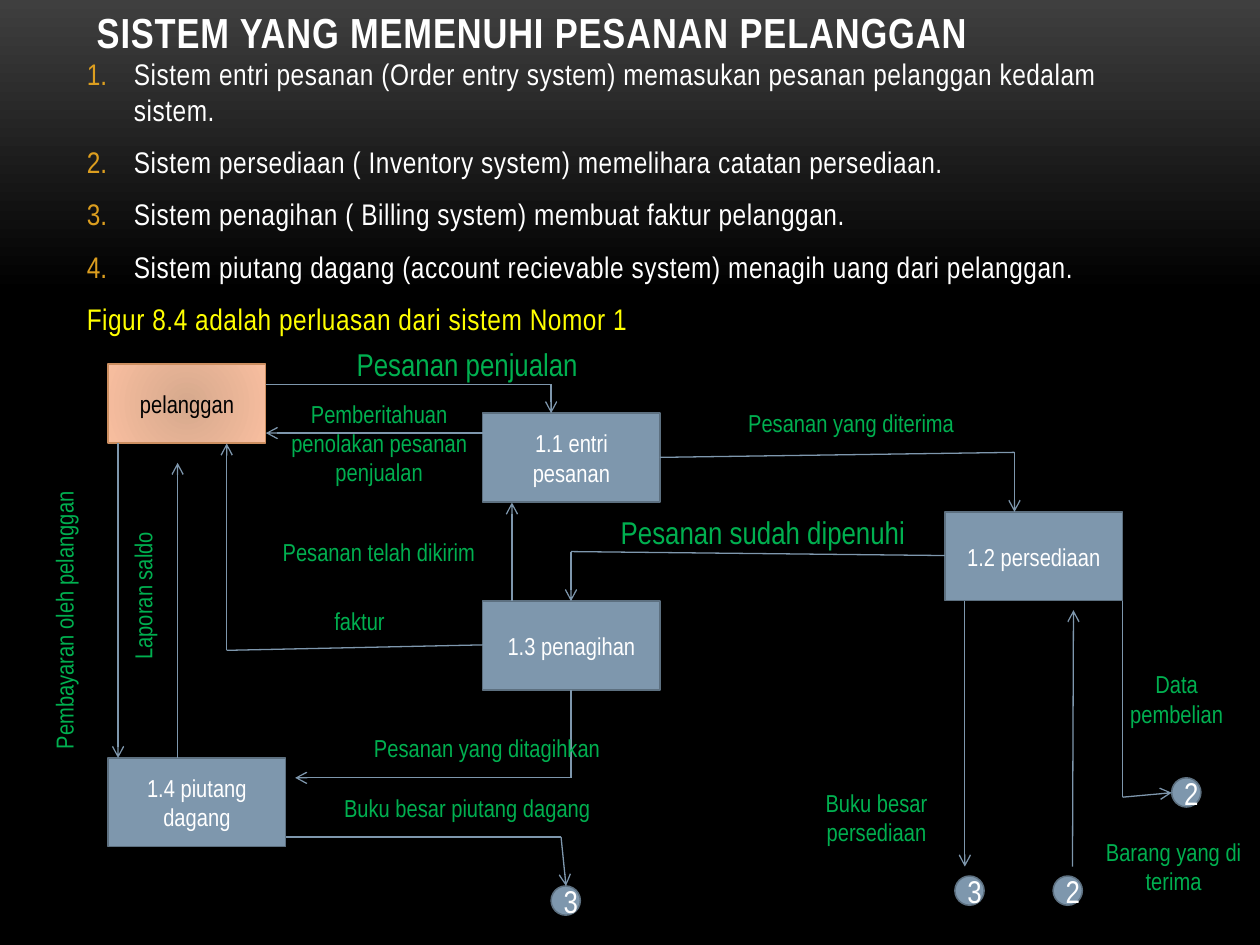
from dataclasses import dataclass

import pptx
import pptx.dml.color
import pptx.enum.shapes
import pptx.enum.text
import pptx.oxml
import pptx.oxml.ns
import pptx.util
from pptx.util import Cm, Pt

FONT = "Arial Narrow"
COLORS = {
    "sky": "3F3F3F", "black": "000000", "white": "FFFFFF",
    "number": "DC9E1F", "note": "FFFF00", "label": "00B050",
    "steel": "7E97AD", "steel edge": "5D7080",
    "peach dark": "D6A98D", "peach": "F8BE9F", "peach edge": "CC8E60",
}
PROCESS_SIZE = (3.58, 1.79)
REFERENCE_SIZE = (0.59, 0.59)
RECTANGLE = pptx.enum.shapes.MSO_SHAPE.RECTANGLE
CIRCLE = pptx.enum.shapes.MSO_SHAPE.FLOWCHART_CONNECTOR
TOP = pptx.enum.text.MSO_ANCHOR.TOP
MIDDLE = pptx.enum.text.MSO_ANCHOR.MIDDLE
CENTER = pptx.enum.text.PP_ALIGN.CENTER


@dataclass
class Node:
    text: str
    left: float
    top: float
    size: tuple[float, float] = PROCESS_SIZE
    shape: int = RECTANGLE
    points: int = 14


@dataclass
class Flow:
    """A labelled route in cm; its arrowhead sits at the last stop."""
    label: str
    frame: tuple[float, float, float, float]
    route: list[tuple[float, float]]
    points: int = 14
    upright: bool = False


CUSTOMER = Node("pelanggan", 2.18, 7.34, (3.18, 1.59))
PROCESSES = [
    Node("1.1 entri pesanan", 9.73, 8.33),
    Node("1.3 penagihan", 9.73, 12.12),
    Node("1.2 persediaan", 19.05, 10.32),
    Node("1.4 piutang dagang", 2.18, 15.28),
]
REFERENCES = [
    Node(number, left, top, REFERENCE_SIZE, CIRCLE, 18)
    for number, left, top in [
        ("3", 11.11, 17.86), ("3", 19.25, 17.66), ("2", 21.23, 17.66), ("2", 23.62, 15.68),
    ]
]
FLOWS = [
    Flow("Pesanan penjualan", (5.95, 6.94, 6.94, 0.79),
         [(5.36, 7.75), (11.11, 7.75), (11.11, 8.33)], points=18),
    Flow("Pemberitahuan penolakan pesanan penjualan", (5.56, 8.13, 4.17, 1.59),
         [(9.73, 8.73), (5.36, 8.73)]),
    Flow("Pesanan yang diterima", (13.69, 8.13, 6.94, 0.79),
         [(13.3, 9.22), (20.45, 9.12), (20.45, 10.32)]),
    Flow("Pesanan sudah dipenuhi", (11.91, 10.32, 6.94, 0.79),
         [(19.05, 11.2), (11.51, 11.12), (11.51, 12.12)], points=18),
    Flow("Pesanan telah dikirim", (4.96, 10.72, 5.36, 0.79),
         [(10.32, 12.12), (10.32, 10.13)]),
    Flow("faktur", (4.57, 12.12, 5.36, 0.79),
         [(9.73, 13.0), (4.57, 13.11), (4.57, 8.94)]),
    Flow("Pesanan yang ditagihkan", (6.35, 14.68, 6.94, 0.79),
         [(11.51, 13.9), (11.51, 15.68), (5.95, 15.68)]),
    Flow("Buku besar piutang dagang", (5.95, 15.88, 6.94, 0.79),
         [(5.77, 16.87), (11.31, 16.87), (11.41, 17.86)]),
    Flow("Buku besar persediaan", (16.08, 15.48, 3.18, 1.98),
         [(19.45, 12.12), (19.45, 17.47)]),
    Flow("Barang yang di terima", (21.92, 16.67, 3.48, 1.59),
         [(21.62, 17.47), (21.64, 12.3)]),
    Flow("Data pembelian", (22.43, 12.7, 2.58, 2.78),
         [(22.63, 12.12), (22.63, 16.07), (23.62, 15.98)]),
    Flow("Laporan saldo", (2.38, 9.13, 0.99, 5.76),
         [(3.58, 15.28), (3.58, 9.33)], upright=True),
    Flow("Pembayaran oleh pelanggan", (0.79, 9.13, 0.99, 6.75),
         [(2.38, 8.94), (2.38, 15.28)], upright=True),
]
SYSTEMS = [
    "Sistem entri pesanan (Order entry system) memasukan pesanan pelanggan kedalam sistem.",
    "Sistem persediaan ( Inventory system) memelihara catatan persediaan.",
    "Sistem penagihan ( Billing system) membuat faktur pelanggan.",
    "Sistem piutang dagang (account recievable system) menagih uang dari pelanggan.",
]


def rgb(name: str) -> pptx.dml.color.RGBColor:
    return pptx.dml.color.RGBColor.from_string(COLORS[name])


def append_xml(parent, markup: str) -> None:
    """Append a DrawingML element, given without its namespace declaration."""
    tag_end = min(markup.index(mark) for mark in " />" if mark in markup)
    declared = f'{markup[:tag_end]} {pptx.oxml.ns.nsdecls("a")}{markup[tag_end:]}'
    parent.append(pptx.oxml.parse_xml(declared))


def write(paragraph, text: str, *, points: int = 14, color: str = "white",
          bold: bool = False, align=None, tracking: int = 0) -> None:
    """Add a formatted run; tracking is in hundredths of a point."""
    paragraph.alignment = align
    run = paragraph.add_run()
    run.text = text
    run.font.name = FONT
    run.font.size = Pt(points)
    run.font.bold = bold
    run.font.color.rgb = rgb(color)
    if tracking:
        run._r.get_or_add_rPr().set("spc", str(tracking))


def add_frame(slide, frame: tuple[float, float, float, float], anchor=TOP):
    text_frame = slide.shapes.add_textbox(*map(Cm, frame)).text_frame
    text_frame.word_wrap = True
    text_frame.vertical_anchor = anchor
    return text_frame


def add_systems(slide) -> None:
    body = add_frame(slide, (1.5, 1.0, 22.02, 16.28))
    note = "Figur 8.4 adalah perluasan dari sistem Nomor 1"
    for index, sentence in enumerate([*SYSTEMS, note]):
        paragraph = body.add_paragraph() if index else body.paragraphs[0]
        paragraph.space_after = Pt(6)
        if index:
            paragraph.space_before = Pt(3.5)
        numbered = sentence != note
        if numbered:
            properties = paragraph._p.get_or_add_pPr()
            properties.set("marL", str(Cm(0.95)))
            properties.set("indent", str(-Cm(0.95)))
            append_xml(properties, f'<a:buClr><a:srgbClr val="{COLORS["number"]}"/></a:buClr>')
            append_xml(properties, '<a:buFont typeface="+mj-lt"/>')
            append_xml(properties, '<a:buAutoNum type="arabicPeriod"/>')
        write(paragraph, sentence, points=17, tracking=30,
              color="white" if numbered else "note")


def add_node(slide, node: Node, *, edge: str = "steel edge", ink: str = "white"):
    shape = slide.shapes.add_shape(
        node.shape, Cm(node.left), Cm(node.top), *map(Cm, node.size))
    shape.shadow.inherit = False
    shape.fill.solid()
    shape.fill.fore_color.rgb = rgb("steel")
    shape.line.color.rgb = rgb(edge)
    shape.line.width = Pt(0.85)
    shape.text_frame.word_wrap = True
    shape.text_frame.vertical_anchor = MIDDLE
    write(shape.text_frame.paragraphs[0], node.text, points=node.points,
          color=ink, align=CENTER)
    return shape


def set_gradient(fill, start: str, end: str, end_position: float = 1) -> None:
    fill.gradient()
    first, last = fill.gradient_stops
    first.position, last.position = 0, end_position
    first.color.rgb, last.color.rgb = rgb(start), rgb(end)


def add_customer(slide) -> None:
    shape = add_node(slide, CUSTOMER, edge="peach edge", ink="black")
    shape.line.width = Pt(0.75)
    set_gradient(shape.fill, "peach dark", "peach")
    properties = shape._element.spPr
    gradient = properties.find(pptx.oxml.ns.qn("a:gradFill"))
    gradient.remove(gradient.find(pptx.oxml.ns.qn("a:lin")))
    append_xml(gradient, '<a:path path="circle">'
               '<a:fillToRect l="100000" t="100000" r="100000" b="100000"/></a:path>')
    append_xml(properties.find(pptx.oxml.ns.qn("a:effectLst")),
               f'<a:outerShdw blurRad="{Pt(3)}" dist="{Pt(2)}" dir="5400000">'
               '<a:srgbClr val="000000"><a:alpha val="40000"/></a:srgbClr></a:outerShdw>')


def add_route(slide, route: list[tuple[float, float]]) -> None:
    for start, end in zip(route, route[1:]):
        line = slide.shapes.add_connector(
            pptx.enum.shapes.MSO_CONNECTOR.STRAIGHT, *map(Cm, start + end))
        line.line.color.rgb = rgb("steel")
        line.line.width = Pt(0.75)
        if end == route[-1]:
            append_xml(line.line._get_or_add_ln(), '<a:tailEnd type="arrow"/>')
        append_xml(line._element.spPr, "<a:effectLst/>")


def add_label(slide, flow: Flow) -> None:
    label = add_frame(slide, flow.frame, MIDDLE)
    if flow.upright:
        label._txBody.bodyPr.set("vert", "vert270")
    write(label.paragraphs[0], flow.label, points=flow.points, color="label", align=CENTER)


def main() -> None:
    deck = pptx.Presentation()
    deck.slide_width, deck.slide_height = Cm(25.4), Cm(19.05)
    slide = deck.slides.add_slide(deck.slide_layouts[6])
    set_gradient(slide.background.fill, "sky", "black", 0.31)
    slide.background.fill.gradient_angle = 270

    title = add_frame(slide, (1.7, 0, 22.02, 2.18))
    write(title.paragraphs[0], "SISTEM YANG MEMENUHI PESANAN PELANGGAN",
          points=24, bold=True, tracking=50)
    add_systems(slide)
    add_customer(slide)
    for node in PROCESSES + REFERENCES:
        add_node(slide, node)
    for flow in FLOWS:
        add_route(slide, flow.route)
    for flow in FLOWS:
        add_label(slide, flow)
    deck.save("out.pptx")


if __name__ == "__main__":
    main()
